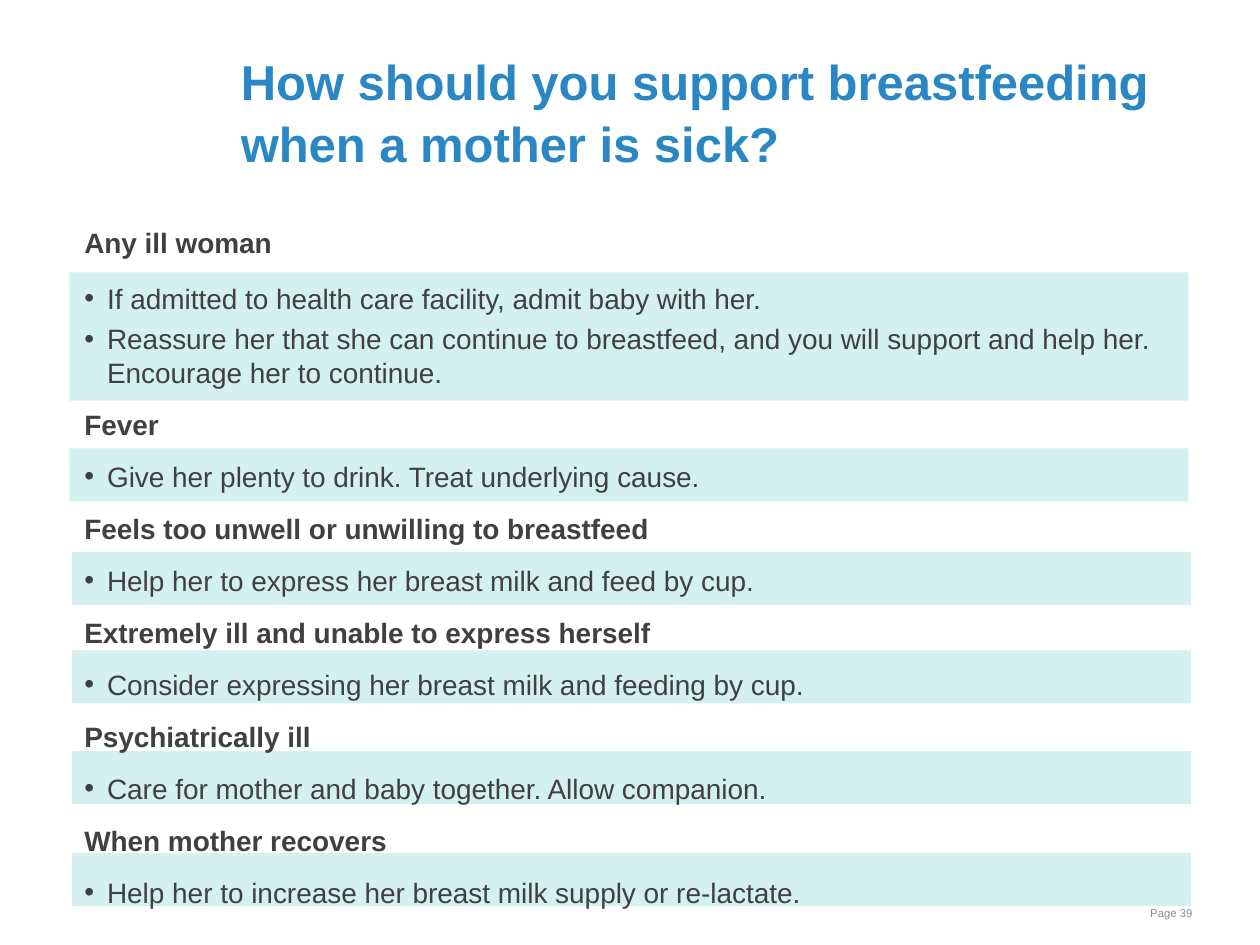
"""Build the slide on supporting breastfeeding when a mother is sick."""
from dataclasses import dataclass

from lxml.etree import SubElement
from pptx import Presentation
from pptx.dml.color import RGBColor
from pptx.enum.shapes import MSO_SHAPE
from pptx.enum.text import MSO_ANCHOR, MSO_AUTO_SIZE, PP_ALIGN
from pptx.oxml.ns import qn
from pptx.slide import Slide
from pptx.text.text import TextFrame, _Paragraph
from pptx.util import Cm, Pt

BLUE = RGBColor(0x2B, 0x87, 0xC3)
AQUA = RGBColor(0xD4, 0xF1, 0xF0)
DARK = RGBColor(0x40, 0x40, 0x40)
GREY = RGBColor(0x8C, 0x8C, 0x8C)
FONT = "Arial"
BAND_WIDTH = 22.56
INDENT = Cm(0.46)
LINE_PITCH = Pt(17.2)


@dataclass(frozen=True)
class Advice:
    condition: str
    actions: tuple[str, ...]
    band_left: float
    band_top: float
    band_height: float = 1.07


ADVICE = (
    Advice("Any ill woman",
           ("If admitted to health care facility, admit baby with her.",
            "Reassure her that she can continue to breastfeed, and you will support and help her."
            "\nEncourage her to continue."),
           1.4, 5.49, 2.59),
    Advice("Fever", ("Give her plenty to drink. Treat underlying cause.",), 1.4, 9.04),
    Advice("Feels too unwell or unwilling to breastfeed",
           ("Help her to express her breast milk and feed by cup.",), 1.45, 11.13),
    Advice("Extremely ill and unable to express herself",
           ("Consider expressing her breast milk and feeding by cup.",), 1.45, 13.11),
    Advice("Psychiatrically ill",
           ("Care for mother and baby together. Allow companion.",), 1.45, 15.14),
    Advice("When mother recovers",
           ("Help her to increase her breast milk supply or re-lactate.",), 1.45, 17.2),
)


def write(paragraph: _Paragraph, text: str, size: float, color: RGBColor,
          bold: bool = False) -> None:
    """Add text run by run, with a line break between lines."""
    for number, line in enumerate(text.split("\n")):
        if number:
            paragraph.add_line_break()
        run = paragraph.add_run()
        run.text = line
        run.font.name = FONT
        run.font.size = Pt(size)
        run.font.bold = bold
        run.font.color.rgb = color


def add_text_frame(slide: Slide, left: float, top: float, width: float,
                   height: float) -> TextFrame:
    """Add a wrapping text box and return its frame."""
    frame = slide.shapes.add_textbox(Cm(left), Cm(top), Cm(width), Cm(height)).text_frame
    frame.word_wrap = True
    frame.auto_size = MSO_AUTO_SIZE.NONE
    return frame


def add_band(slide: Slide, advice: Advice) -> None:
    """Draw the coloured band behind the actions."""
    band = slide.shapes.add_shape(MSO_SHAPE.RECTANGLE, Cm(advice.band_left), Cm(advice.band_top),
                                  Cm(BAND_WIDTH), Cm(advice.band_height))
    band.shadow.inherit = False
    band.fill.solid()
    band.fill.fore_color.rgb = AQUA
    band.line.fill.background()


def next_paragraph(frame: TextFrame) -> _Paragraph:
    """Return the first paragraph while it is empty, else a new one."""
    first = frame.paragraphs[0]
    paragraph = frame.add_paragraph() if first.runs else first
    paragraph.line_spacing = LINE_PITCH
    paragraph.space_before = Pt(10)
    paragraph.space_after = Pt(2.5)
    return paragraph


def add_bullet(paragraph: _Paragraph) -> None:
    """Give the paragraph a hanging bullet."""
    properties = paragraph._p.get_or_add_pPr()
    properties.set("marL", str(INDENT))
    properties.set("indent", str(-INDENT))
    SubElement(properties, qn("a:buFont")).set("typeface", FONT)
    SubElement(properties, qn("a:buChar")).set("char", "•")


def write_advice(frame: TextFrame, advice: Advice) -> None:
    """Write a condition and its bulleted actions."""
    write(next_paragraph(frame), advice.condition, 16, DARK, bold=True)
    several = len(advice.actions) > 1
    for number, action in enumerate(advice.actions):
        paragraph = next_paragraph(frame)
        if several:
            paragraph.line_spacing = 1.0
            paragraph.space_before = Pt(4 if number else 10)
            paragraph.space_after = Pt(2.5 if number else 0)
        add_bullet(paragraph)
        write(paragraph, action, 16, DARK)


def set_title(slide: Slide, text: str) -> None:
    """Place and format the title placeholder."""
    title = slide.shapes.title
    title.left, title.top, title.width, title.height = Cm(4.6), Cm(0.79), Cm(19.3), Cm(2.87)
    frame = title.text_frame
    frame.auto_size = MSO_AUTO_SIZE.NONE
    frame.vertical_anchor = MSO_ANCHOR.MIDDLE
    paragraph = frame.paragraphs[0]
    paragraph.alignment = PP_ALIGN.LEFT
    paragraph.line_spacing = 1.05
    write(paragraph, text, 28, BLUE, bold=True)


def add_page_number(slide: Slide, text: str) -> None:
    """Write the page number at the bottom right."""
    frame = add_text_frame(slide, 18.21, 18.06, 6.15, 0.61)
    frame.margin_right = Cm(0.32)
    frame.vertical_anchor = MSO_ANCHOR.BOTTOM
    paragraph = frame.paragraphs[0]
    paragraph.alignment = PP_ALIGN.RIGHT
    write(paragraph, text, 6.5, GREY)


def main() -> None:
    """Build and save the presentation."""
    presentation = Presentation()
    presentation.slide_width, presentation.slide_height = Cm(25.4), Cm(19.05)
    slide = presentation.slides.add_slide(presentation.slide_layouts[5])
    add_page_number(slide, "Page 39")
    for advice in ADVICE:
        add_band(slide, advice)
    set_title(slide, "How should you support breastfeeding when a mother is sick?")
    guidance = add_text_frame(slide, 1.45, 4.5, 22.86, 15.47)
    for advice in ADVICE:
        write_advice(guidance, advice)
    presentation.save("out.pptx")


if __name__ == "__main__":
    main()
